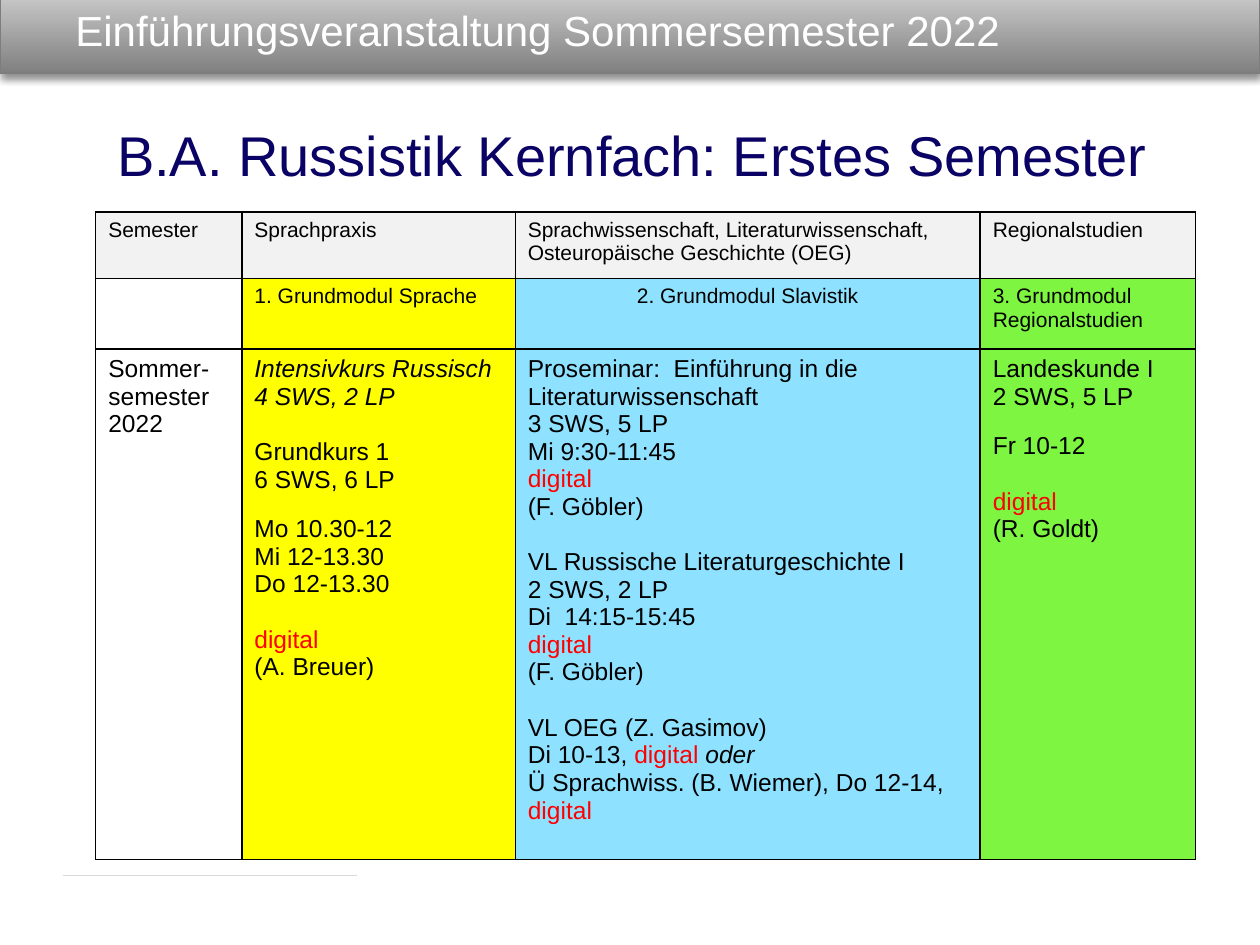
from lxml.etree import SubElement
from pptx import Presentation
from pptx.dml.color import RGBColor
from pptx.enum.shapes import MSO_CONNECTOR, MSO_SHAPE
from pptx.enum.text import MSO_ANCHOR, PP_ALIGN
from pptx.oxml import parse_xml
from pptx.oxml.ns import nsdecls, qn
from pptx.util import Pt

FONT = "Arial"
BLACK, RED, WHITE = "000000", "FF0000", "FFFFFF"
GREY, YELLOW, BLUE, GREEN = "F2F2F2", "FFFF00", "8FE2FF", "7DF541"
DIGITAL = ("digital", RED, False)
GAP, SMALL_GAP = 16, 12.5

COLUMNS = [83.5, 156.25, 265.7, 123.1]
ROWS = [38.2, 40.3, 291.6]
FILLS = [[GREY] * 4] + [[None, YELLOW, BLUE, GREEN]] * 2
HEADINGS = [
    ["Semester", "Sprachpraxis",
     "Sprachwissenschaft, Literaturwissenschaft, Osteuropäische Geschichte (OEG)",
     "Regionalstudien"],
    ["", "1. Grundmodul Sprache", "2. Grundmodul Slavistik",
     "3. Grundmodul Regionalstudien"],
]
COURSES = [
    [(0, ["Sommer-semester 2022"])],
    [(0, [("Intensivkurs Russisch", BLACK, True)]),
     (0, [("4 SWS, 2 LP", BLACK, True)]),
     (GAP, ["Grundkurs 1"]),
     (0, ["6 SWS, 6 LP"]),
     (SMALL_GAP, ["Mo 10.30-12"]),
     (0, ["Mi 12-13.30"]),
     (0, ["Do 12-13.30"]),
     (GAP, [DIGITAL]),
     (0, ["(A. Breuer)"])],
    [(0, ["Proseminar:  Einführung in die Literaturwissenschaft"]),
     (0, ["3 SWS, 5 LP"]),
     (0, ["Mi 9:30-11:45"]),
     (0, [DIGITAL]),
     (0, ["(F. Göbler)"]),
     (GAP, ["VL Russische Literaturgeschichte I"]),
     (0, ["2 SWS, 2 LP"]),
     (0, ["Di  14:15-15:45"]),
     (0, [DIGITAL]),
     (0, ["(F. Göbler)"]),
     (GAP, ["VL OEG (Z. Gasimov)"]),
     (0, ["Di 10-13, ", ("digital ", RED, False), ("oder", BLACK, True)]),
     (0, ["Ü Sprachwiss. (B. Wiemer), Do 12-14, ", DIGITAL])],
    [(0, ["Landeskunde I"]),
     (0, ["2 SWS, 5 LP"]),
     (SMALL_GAP, ["Fr 10-12"]),
     (GAP, [DIGITAL]),
     (0, ["(R. Goldt)"])],
]


def rgb(value):
    """Turn a hex string into a colour."""
    return RGBColor.from_string(value)


def add_run(p, text, size, color=BLACK, italic=False):
    """Add one formatted run to a paragraph."""
    r = p.add_run()
    r.text = text
    r.font.name, r.font.size, r.font.italic = FONT, Pt(size), italic
    r.font.color.rgb = rgb(color)


def add_text(s, box, text, size, color, anchor):
    """Place a single line of text in a box."""
    tf = s.shapes.add_textbox(*map(Pt, box)).text_frame
    tf.word_wrap, tf.vertical_anchor = True, anchor
    add_run(tf.paragraphs[0], text, size, color)


def add_banner(s, box):
    """Draw the shaded bar with its soft shadow and the event name."""
    left, top, width, height = box
    sp = s.shapes.add_shape(MSO_SHAPE.RECTANGLE, *map(Pt, box))
    sp.fill.gradient()
    sp.fill.gradient_angle = 90
    for stop, color in zip(sp.fill.gradient_stops, ("808080", "CDCDCD")):
        stop.color.rgb = rgb(color)
    sp.line.color.rgb, sp.line.width = rgb("7D7D7D"), Pt(0.75)
    sp.shadow.inherit = False
    effects = sp._element.spPr.find(qn("a:effectLst"))
    effects.append(parse_xml(
        f'<a:outerShdw {nsdecls("a")} blurRad="{Pt(4)}" dist="{Pt(3)}" dir="5400000" '
        'rotWithShape="0"><a:srgbClr val="000000"><a:alpha val="43000"/>'
        '</a:srgbClr></a:outerShdw>'))
    add_text(s, (left + 36, top + 5.75, width - 52.5, 33.85),
             "Einführungsveranstaltung Sommersemester 2022", 24, WHITE,
             MSO_ANCHOR.MIDDLE)


def add_footer_line(s, left, top, width):
    """Draw the thin line at the foot of the slide."""
    line = s.shapes.add_connector(
        MSO_CONNECTOR.STRAIGHT, Pt(left), Pt(top), Pt(left + width), Pt(top))
    line.line.color.rgb, line.line.width = rgb("D8D8D8"), Pt(0.75)
    SubElement(line._element.spPr, qn("a:effectLst"))


def style_cell(cell, fill):
    """Give a cell black borders and its fill."""
    tcPr = cell._tc.get_or_add_tcPr()
    for side in "LRTB":
        tcPr.append(parse_xml(
            f'<a:ln{side} {nsdecls("a")} w="{Pt(1)}"><a:solidFill>'
            f'<a:srgbClr val="{BLACK}"/></a:solidFill></a:ln{side}>'))
    if fill:
        cell.fill.solid()
        cell.fill.fore_color.rgb = rgb(fill)
    else:
        cell.fill.background()


def fill_cell(cell, paragraphs, size):
    """Write paragraphs of runs, each with its space before, into a cell."""
    tf = cell.text_frame
    for i, (gap, runs) in enumerate(paragraphs):
        p = tf.add_paragraph() if i else tf.paragraphs[0]
        if gap:
            p.space_before = Pt(gap)
        for run in runs:
            add_run(p, *((run, size) if isinstance(run, str)
                         else (run[0], size, *run[1:])))


def add_timetable(s, left, top):
    """Build the table of modules and courses."""
    table = s.shapes.add_table(len(ROWS), len(COLUMNS), Pt(left), Pt(top),
                               Pt(sum(COLUMNS)), Pt(sum(ROWS))).table
    table.horz_banding = table.first_row = False
    for column, width in zip(table.columns, COLUMNS):
        column.width = Pt(width)
    for row, height, fills in zip(table.rows, ROWS, FILLS):
        row.height = Pt(height)
        for cell, fill in zip(row.cells, fills):
            style_cell(cell, fill)
    for i, headings in enumerate(HEADINGS):
        for j, text in enumerate(headings):
            if text:
                fill_cell(table.cell(i, j), [(0, [text])], 12)
    for j, course in enumerate(COURSES):
        fill_cell(table.cell(2, j), course, 14)
    table.cell(1, 2).text_frame.paragraphs[0].alignment = PP_ALIGN.CENTER


def main():
    """Build the slide and save it."""
    prs = Presentation()
    prs.slide_width, prs.slide_height = Pt(720), Pt(540)
    s = prs.slides.add_slide(prs.slide_layouts[6])
    add_banner(s, (0, -5.75, 720, 47.5))
    add_footer_line(s, 36, 500.4, 168)
    add_timetable(s, 54.7, 121)
    add_text(s, (59.8, 65.5, 607, 46), "B.A. Russistik Kernfach: Erstes Semester",
             32, "0A0365", MSO_ANCHOR.TOP)
    prs.save("out.pptx")


if __name__ == "__main__":
    main()
